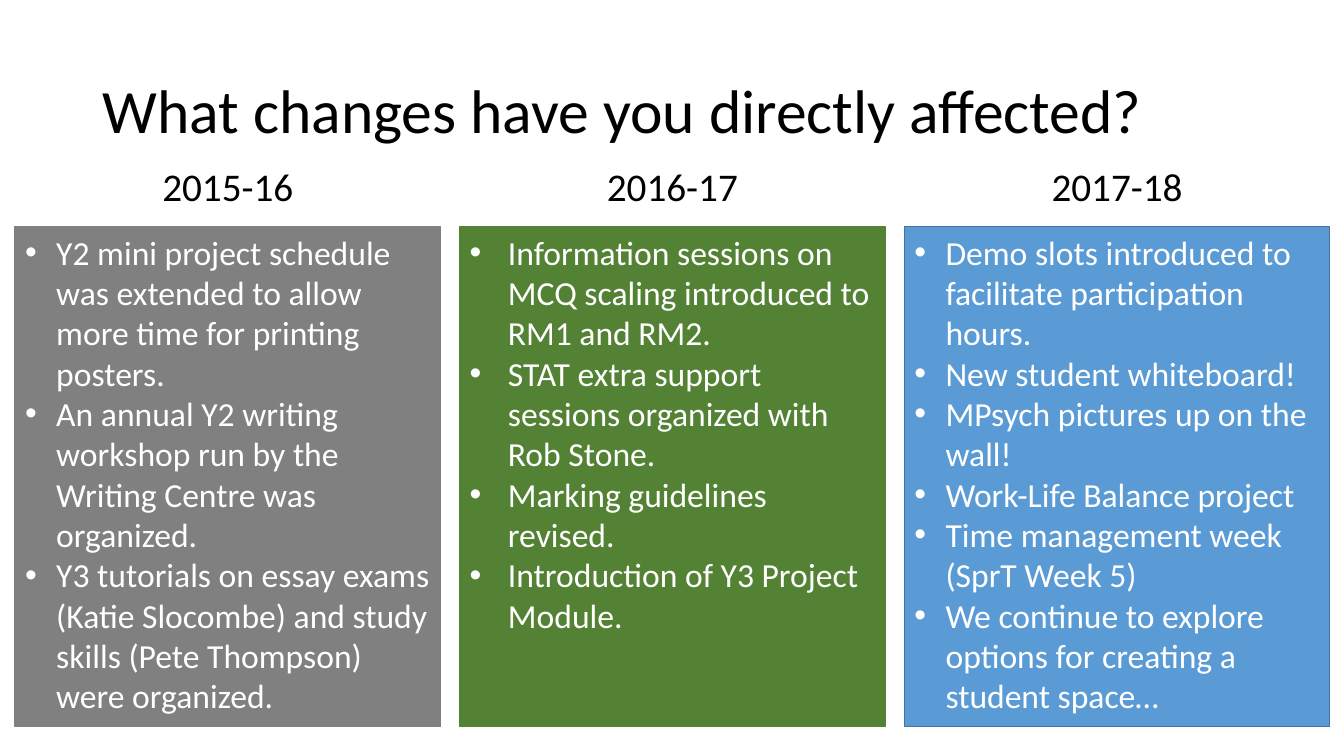
from dataclasses import dataclass

from lxml.etree import SubElement
from pptx import Presentation
from pptx.dml.color import RGBColor
from pptx.enum.shapes import MSO_SHAPE as Shape
from pptx.enum.text import MSO_ANCHOR as Anchor, PP_ALIGN as Align
from pptx.oxml.ns import qn
from pptx.util import Inches, Pt


@dataclass(frozen=True)
class Theme:
    font: str = "Calibri"
    bullet_font: str = "Arial"
    ink: str = "000000"
    paper: str = "FFFFFF"
    grey: str = "808080"
    green: str = "548235"
    blue: str = "5B9BD5"
    blue_edge: str = "43739E"
    title_size: int = 44
    year_size: int = 28
    body_size: int = 24


@dataclass(frozen=True)
class Grid:
    cell: float = 0.15
    margin: float = 1
    column: float = 28.13
    pitch: float = 29.4

    def box(self, left, top, width, height):
        return [Inches(self.cell * cells) for cells in (left, top, width, height)]

    def in_column(self, index, top, height):
        return self.box(self.margin + index * self.pitch, top, self.column, height)


class SlideBuilder:
    def __init__(self, slide, theme, grid):
        self.slide = slide
        self.theme = theme
        self.grid = grid

    def style(self, paragraph, size, color):
        for run in paragraph.runs:
            run.font.name = self.theme.font
            run.font.size = Pt(size)
            run.font.color.rgb = RGBColor.from_string(color)

    def label(self, place, wording, size, align, anchor=Anchor.TOP):
        frame = self.slide.shapes.add_textbox(*place).text_frame
        frame.word_wrap = True
        frame.vertical_anchor = anchor
        frame.text = wording
        paragraph = frame.paragraphs[0]
        paragraph.alignment = align
        self.style(paragraph, size, self.theme.ink)
        return paragraph

    def title(self, wording):
        place = self.grid.box(6.13, 2.67, 76.67, 9.67)
        heading = self.label(place, wording, self.theme.title_size, Align.LEFT, Anchor.MIDDLE)
        heading.line_spacing = 0.9

    def year(self, column, wording):
        place = self.grid.in_column(column, 10.4, 3.8)
        self.label(place, wording, self.theme.year_size, Align.CENTER)

    def bullet(self, paragraph, indent):
        properties = paragraph._p.get_or_add_pPr()
        properties.set("marL", str(Inches(indent)))
        properties.set("indent", str(-Inches(indent)))
        SubElement(properties, qn("a:buFont")).set("typeface", self.theme.bullet_font)
        SubElement(properties, qn("a:buChar")).set("char", "•")

    def panel(self, column, changes, fill, edge, indent):
        place = self.grid.in_column(column, 15, 33.07)
        panel = self.slide.shapes.add_shape(Shape.RECTANGLE, *place)
        panel.shadow.inherit = False
        panel.fill.solid()
        panel.fill.fore_color.rgb = RGBColor.from_string(fill)
        panel.line.color.rgb = RGBColor.from_string(edge)
        panel.line.width = Pt(1)
        frame = panel.text_frame
        frame.word_wrap = True
        frame.vertical_anchor = Anchor.TOP
        frame.text = "\n".join(changes)
        for paragraph in frame.paragraphs:
            paragraph.alignment = Align.LEFT
            self.bullet(paragraph, indent)
            self.style(paragraph, self.theme.body_size, self.theme.paper)


def main():
    deck = Presentation()
    deck.slide_width = Inches(13.33)
    deck.slide_height = Inches(7.5)
    theme = Theme()
    builder = SlideBuilder(deck.slides.add_slide(deck.slide_layouts[6]), theme, Grid())

    years = [
        ("2015-16", theme.grey, theme.grey, 0.31, [
            "Y2 mini project schedule was extended to allow more time for printing posters.",
            "An annual Y2 writing workshop run by the Writing Centre was organized.",
            "Y3 tutorials on essay exams (Katie Slocombe) and study skills "
            "(Pete Thompson) were organized.",
        ]),
        ("2016-17", theme.green, theme.green, 0.38, [
            "Information sessions on MCQ scaling introduced to RM1 and RM2.",
            "STAT extra support sessions organized with Rob Stone.",
            "Marking guidelines revised.",
            "Introduction of Y3 Project Module.",
        ]),
        ("2017-18", theme.blue, theme.blue_edge, 0.31, [
            "Demo slots introduced to facilitate participation hours.",
            "New student whiteboard!",
            "MPsych pictures up on the wall!",
            "Work-Life Balance project",
            "Time management week (SprT Week 5)",
            "We continue to explore options for creating a student space…",
        ]),
    ]

    builder.title("What changes have you directly affected?")
    for column, (year, fill, edge, indent, changes) in enumerate(years):
        builder.panel(column, changes, fill, edge, indent)
        builder.year(column, year)

    deck.save("out.pptx")


if __name__ == "__main__":
    main()
